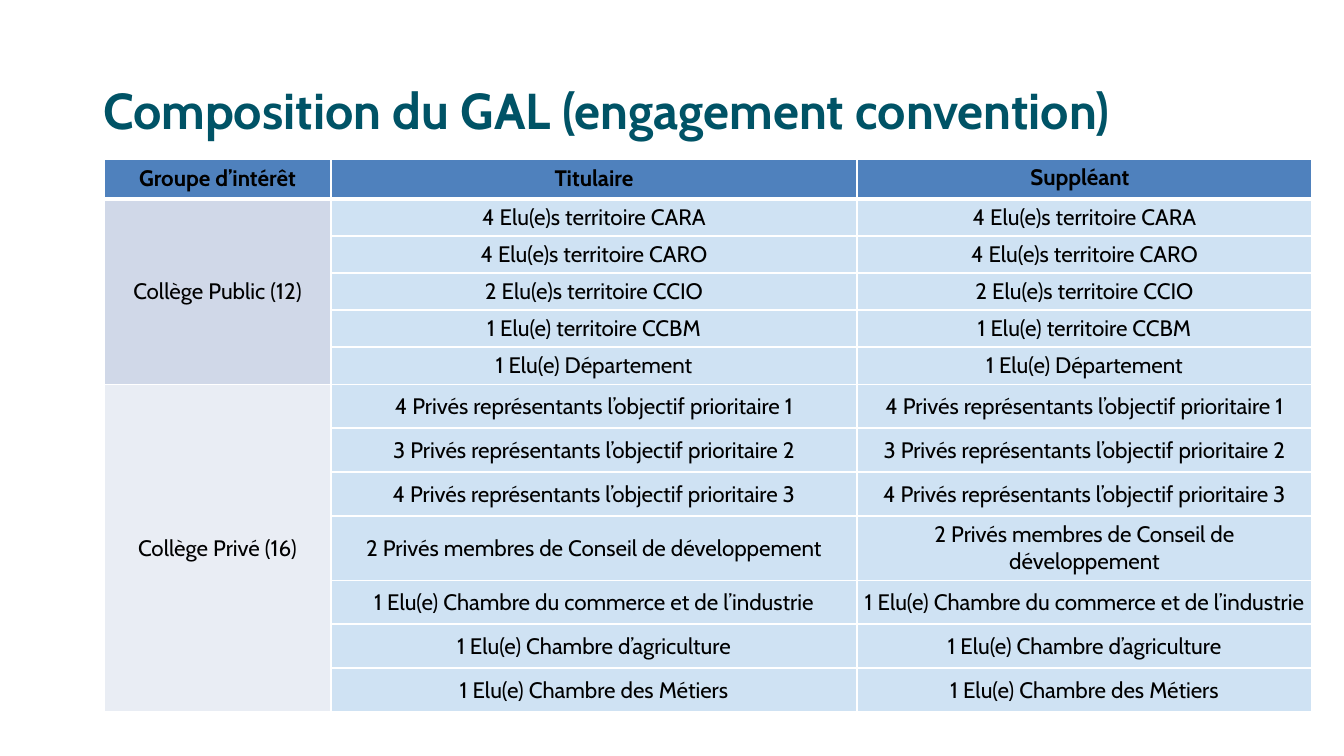
from lxml.etree import SubElement
from pptx import Presentation
from pptx.dml.color import RGBColor
from pptx.enum.text import MSO_ANCHOR as ANCHOR, MSO_AUTO_SIZE as AUTO, PP_ALIGN as ALIGN
from pptx.oxml.ns import qn
from pptx.util import Emu, Pt

EMU_PER_PX = 914400 / 100.8

HEADERS = ["Groupe d’intérêt", "Titulaire", "Suppléant"]
COLLEGES = [
    ("Collège Public (12)", "D0D8E8", [
        ("4 Elu(e)s territoire CARA", 37),
        ("4 Elu(e)s territoire CARO", 37),
        ("2 Elu(e)s territoire CCIO", 37),
        ("1 Elu(e) territoire CCBM", 37),
        ("1 Elu(e) Département", 37),
    ]),
    ("Collège Privé (16)", "E9EDF4", [
        ("4 Privés représentants l’objectif prioritaire 1", 44),
        ("3 Privés représentants l’objectif prioritaire 2", 44),
        ("4 Privés représentants l’objectif prioritaire 3", 44),
        ("2 Privés membres de Conseil de développement", 64),
        ("1 Elu(e) Chambre du commerce et de l’industrie", 44),
        ("1 Elu(e) Chambre d’agriculture", 44),
        ("1 Elu(e) Chambre des Métiers", 44),
    ]),
]


def px(n):
    return Emu(round(n * EMU_PER_PX))


def rgb(value):
    return RGBColor.from_string(value)


class Deck:
    font = "Cabin"
    title_color = "005366"
    text_color = "000000"
    border_color = "FFFFFF"
    header_fill = "4F81BD"
    member_fill = "CFE2F3"

    def __init__(self, width, height):
        self.prs = Presentation()
        self.prs.slide_width, self.prs.slide_height = px(width), px(height)
        self.slide = self.prs.slides.add_slide(self.prs.slide_layouts[5])

    def format(self, p, size, color, bold, align):
        p.alignment = align
        for r in p.runs:
            r.font.name, r.font.size, r.font.bold = self.font, Pt(size), bold
            r.font.color.rgb = rgb(color)

    def title(self, text, x, y, w, h):
        sp = self.slide.shapes.title
        sp.left, sp.top, sp.width, sp.height = px(x), px(y), px(w), px(h)
        tf = sp.text_frame
        tf.text = text
        tf.word_wrap = True
        tf.auto_size = AUTO.NONE
        tf.vertical_anchor = ANCHOR.MIDDLE
        p = tf.paragraphs[0]
        p.line_spacing = 0.9
        self.format(p, 36, self.title_color, True, ALIGN.LEFT)

    def table(self, x, y, widths, heights):
        frame = self.slide.shapes.add_table(
            len(heights), len(widths), px(x), px(y), px(sum(widths)), px(sum(heights)))
        table = frame.table
        table.horz_banding = False
        for column, w in zip(table.columns, widths):
            column.width = px(w)
        for row, h in zip(table.rows, heights):
            row.height = px(h)
        return table

    def borders(self, cell, top, bottom):
        tcPr = cell._tc.get_or_add_tcPr()
        for side, width in (("L", 1), ("R", 1), ("T", top), ("B", bottom)):
            ln = SubElement(tcPr, qn("a:ln" + side), w=str(Pt(width)))
            fill = SubElement(ln, qn("a:solidFill"))
            SubElement(fill, qn("a:srgbClr"), val=self.border_color)

    def cell(self, cell, text, fill, bold=False, top=1, bottom=1):
        self.borders(cell, top, bottom)
        cell.fill.solid()
        cell.fill.fore_color.rgb = rgb(fill)
        cell.margin_left = cell.margin_right = px(5)
        cell.margin_top = cell.margin_bottom = px(5)
        cell.vertical_anchor = ANCHOR.MIDDLE
        cell.text_frame.text = text
        self.format(cell.text_frame.paragraphs[0], 16, self.text_color, bold, ALIGN.CENTER)


def main():
    deck = Deck(1344, 756)
    deck.title("Composition du GAL (engagement convention)", 93, 40, 1159, 147)

    heights = [40] + [h for _, _, members in COLLEGES for _, h in members]
    table = deck.table(104, 159, [227, 526, 455], heights)
    for col, text in enumerate(HEADERS):
        deck.cell(table.cell(0, col), text, deck.header_fill, bold=True, bottom=3)
    substitute = table.cell(0, 2)
    substitute.vertical_anchor = ANCHOR.TOP
    substitute.margin_right = px(14)

    row = 1
    for name, fill, members in COLLEGES:
        table.cell(row, 0).merge(table.cell(row + len(members) - 1, 0))
        for i, (member, _) in enumerate(members):
            top = 3 if row == 1 else 1
            deck.cell(table.cell(row, 0), name if i == 0 else "", fill, top=top)
            for col in (1, 2):
                deck.cell(table.cell(row, col), member, deck.member_fill, top=top)
            row += 1

    deck.prs.save("out.pptx")


if __name__ == "__main__":
    main()
